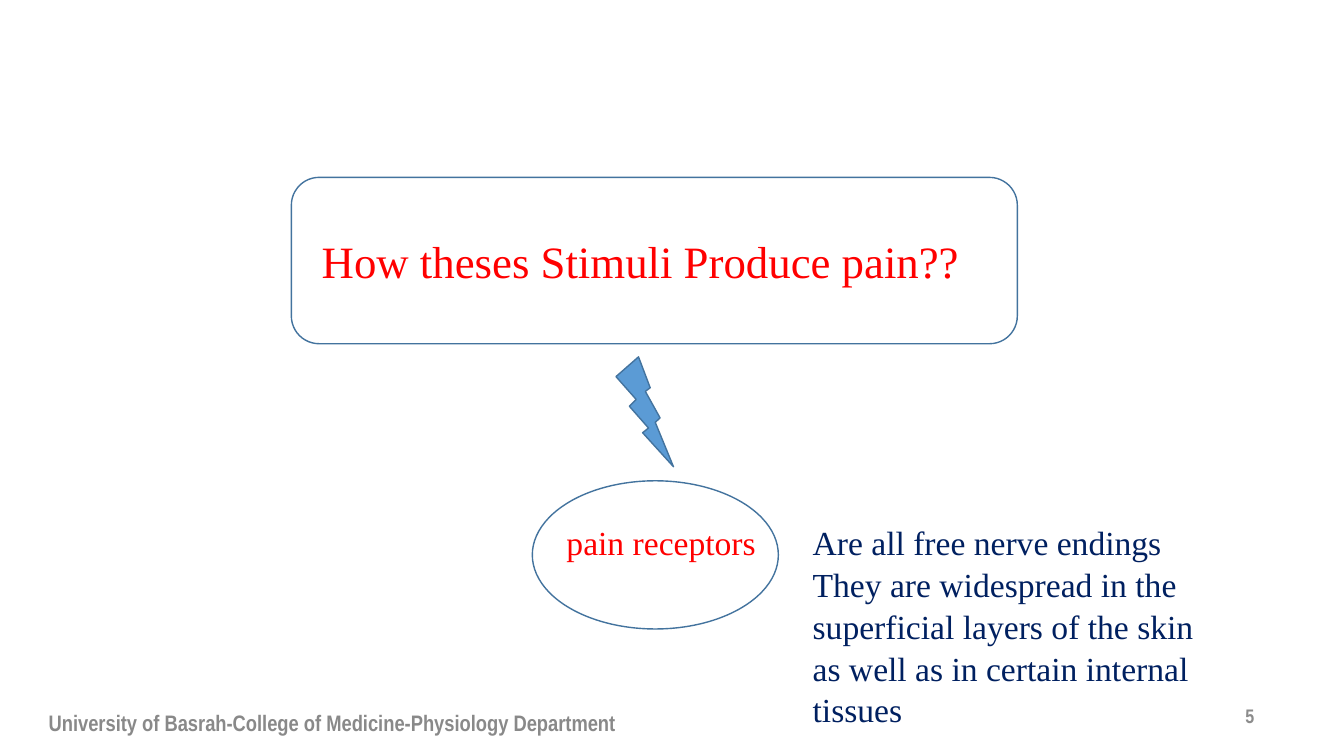
import pptx
import pptx.dml.color
import pptx.enum.shapes
import pptx.enum.text
import pptx.util

PX = 9144  # EMU per px, 100 px to the inch
SHAPE = pptx.enum.shapes.MSO_SHAPE
ALIGN = pptx.enum.text.PP_ALIGN
ANCHOR = pptx.enum.text.MSO_ANCHOR
SERIF, NARROW = "Times New Roman", "Arial Narrow"
RED, NAVY, BLUE, OUTLINE = "FF0000", "002060", "5B9BD5", "43739E"


def color(value):
    return pptx.dml.color.RGBColor.from_string(value)


def emu(*lengths):
    return [length * PX for length in lengths]


def add_outline_shape(page, kind, left, top, width, height, fill=None):
    shape = page.shapes.add_shape(kind, *emu(left, top, width, height))
    shape.shadow.inherit = False
    if fill:
        shape.fill.solid()
        shape.fill.fore_color.rgb = color(fill)
    else:
        shape.fill.background()
    shape.line.color.rgb = color(OUTLINE)
    shape.line.width = pptx.util.Pt(1)


def place(box, left, top, width, height):
    box.left, box.top, box.width, box.height = emu(left, top, width, height)
    return box


def add_text_box(page, left, top, width, height):
    return page.shapes.add_textbox(*emu(left, top, width, height))


def write(box, *lines, size=24, font=SERIF, fill=RED, bold=False,
          align=ALIGN.LEFT, anchor=ANCHOR.TOP, spacing=1.0):
    frame = box.text_frame
    frame.word_wrap = True
    frame.auto_size = pptx.enum.text.MSO_AUTO_SIZE.NONE
    frame.vertical_anchor = anchor
    frame.text = "\n".join(lines)
    for para in frame.paragraphs:
        para.alignment = align
        para.line_spacing = spacing
        para.space_before = pptx.util.Pt(0)
        for span in para.runs:
            span.font.size = pptx.util.Pt(size)
            span.font.name = font
            span.font.bold = bold
            span.font.color.rgb = color(fill)


def remove_bullets(box):
    for para in box.text_frame.paragraphs:
        properties = para._p.get_or_add_pPr()
        properties.set("marL", "0")
        properties.set("indent", "0")
        properties.append(pptx.oxml.parse_xml(
            '<a:buNone xmlns:a="http://schemas.openxmlformats.org/drawingml/2006/main"/>'))


def main():
    deck = pptx.Presentation()
    deck.slide_width, deck.slide_height = emu(1333, 750)
    page = deck.slides.add_slide(deck.slide_layouts[1])

    # Question in its frame
    add_outline_shape(page, SHAPE.ROUNDED_RECTANGLE, 289, 176, 720, 165)
    write(place(page.shapes.title, 309, 227, 719, 64),
          "How theses Stimuli Produce pain??", size=32)

    # Bolt leading to the receptors
    add_outline_shape(page, SHAPE.LIGHTNING_BOLT, 611, 354, 57, 109, fill=BLUE)
    add_outline_shape(page, SHAPE.OVAL, 528, 477, 244, 147)
    write(add_text_box(page, 552, 511, 233, 81), "pain receptors", spacing=1.04)

    # Explanation
    body = place(page.placeholders[1], 796, 511, 419, 242)
    write(body, "Are all free nerve endings",
          "They are widespread in the superficial layers of the skin "
          "as well as in certain internal tissues", fill=NAVY, spacing=1.04)
    remove_bullets(body)

    # Footer and page number
    write(add_text_box(page, 20, 697, 619, 40),
          "University of Basrah-College of Medicine-Physiology Department",
          size=16, font=NARROW, fill="898989", bold=True,
          align=ALIGN.CENTER, anchor=ANCHOR.MIDDLE)
    write(add_text_box(page, 1015, 690, 239, 40), "5",
          size=14, font=NARROW, fill="8C8C8C", bold=True,
          align=ALIGN.RIGHT, anchor=ANCHOR.MIDDLE)

    deck.save("out.pptx")


if __name__ == "__main__":
    main()
